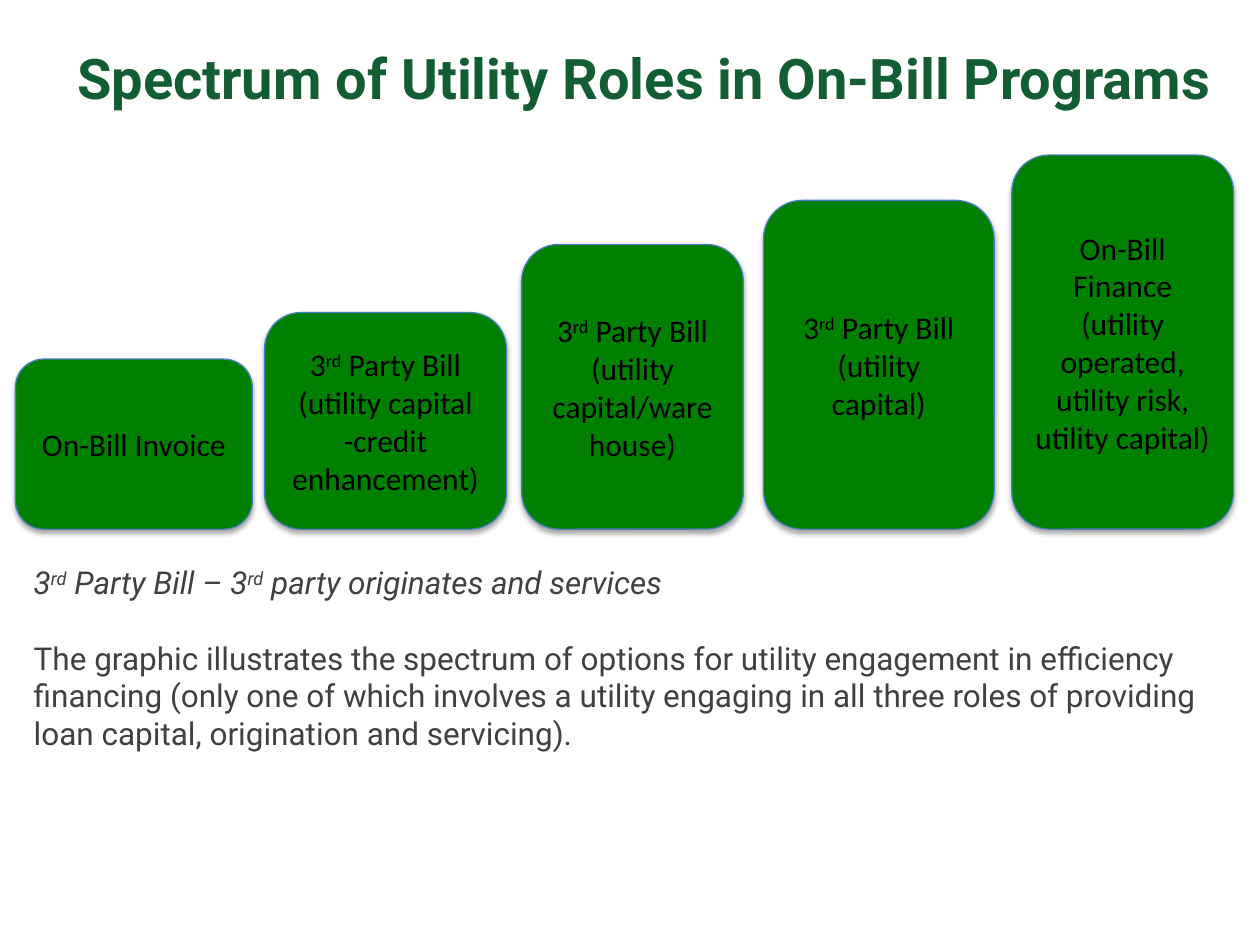
from typing import NamedTuple

from lxml import etree
from pptx import Presentation
from pptx.dml.color import RGBColor
from pptx.enum.shapes import MSO_SHAPE
from pptx.enum.text import MSO_ANCHOR, PP_ALIGN
from pptx.oxml import parse_xml
from pptx.util import Pt

ROUNDED = MSO_SHAPE.ROUNDED_RECTANGLE
MIDDLE = MSO_ANCHOR.MIDDLE
CENTER, LEFT = PP_ALIGN.CENTER, PP_ALIGN.LEFT
BASELINE = 302.4
SHADOW = """
<a:effectLst xmlns:a="http://schemas.openxmlformats.org/drawingml/2006/main">
  <a:outerShdw blurRad="39370" dist="22860" dir="5400000" rotWithShape="0">
    <a:srgbClr val="000000"><a:alpha val="35000"/></a:srgbClr>
  </a:outerShdw>
</a:effectLst>"""


class Role(NamedTuple):
    left: float
    width: float
    height: float
    lines: tuple[str, ...]


THIRD_PARTY = "3^rd^ Party Bill"
ROLES = [
    Role(8.8, 135.4, 97.2, ("On-Bill Invoice",)),
    Role(151.2, 138.2, 123.8, (THIRD_PARTY, "(utility capital -credit enhancement)")),
    Role(298.1, 126.7, 162.7, (THIRD_PARTY, "(utility capital/warehouse)")),
    Role(436.3, 131.8, 187.9, (THIRD_PARTY, "(utility capital)")),
    Role(578.2, 126.7, 213.8,
         ("On-Bill Finance", "(utility operated, utility risk, utility capital)")),
]


def color(value: str) -> RGBColor:
    return RGBColor.from_string(value)


def write(paragraph, text: str, font: str, size: float, hex_color: str,
          align=LEFT, bold: bool = False, italic: bool = False) -> None:
    """Fill a paragraph; text between carets is set as superscript."""
    paragraph.alignment = align
    paragraph.font.name = font
    paragraph.font.size = Pt(size)
    paragraph.font.bold = bold
    paragraph.font.italic = italic
    paragraph.font.color.rgb = color(hex_color)
    for index, part in enumerate(text.split("^")):
        run = paragraph.add_run()
        run.text = part
        if index % 2:
            run.font._element.set("baseline", "30000")


def add_text_frame(slide, left: float, top: float, width: float, height: float):
    frame = slide.shapes.add_textbox(Pt(left), Pt(top), Pt(width), Pt(height)).text_frame
    frame.word_wrap = True
    return frame


def add_role(slide, role: Role) -> None:
    box = slide.shapes.add_shape(ROUNDED, Pt(role.left), Pt(BASELINE - role.height),
                                 Pt(role.width), Pt(role.height))
    box.fill.solid()
    box.fill.fore_color.rgb = color("008000")
    box.line.color.rgb = color("4B7EBC")
    box.line.width = Pt(0.75)
    box._element.spPr.append(parse_xml(etree.tostring(etree.fromstring(SHADOW))))
    frame = box.text_frame
    frame.word_wrap = True
    frame.vertical_anchor = MIDDLE
    for index, line in enumerate(role.lines):
        paragraph = frame.add_paragraph() if index else frame.paragraphs[0]
        write(paragraph, line, "Calibri", 18, "000000", CENTER)


def main() -> None:
    deck = Presentation()
    deck.slide_width, deck.slide_height = Pt(720), Pt(540)
    slide = deck.slides.add_slide(deck.slide_layouts[6])

    title = add_text_frame(slide, 16.6, 8.6, 703.4, 71.3)
    title.vertical_anchor = MIDDLE
    write(title.paragraphs[0], "Spectrum of Utility Roles in On-Bill Programs",
          "Roboto", 32, "135D34", CENTER, bold=True)

    for role in ROLES:
        add_role(slide, role)

    notes = add_text_frame(slide, 12.2, 318.2, 692.6, 138.2)
    write(notes.paragraphs[0], "3^rd^ Party Bill – 3^rd^ party originates and services",
          "Roboto", 18, "404040", italic=True)
    explanation = notes.add_paragraph()
    explanation.space_before = Pt(21.6)
    write(explanation,
          "The graphic illustrates the spectrum of options for utility engagement in "
          "efficiency financing (only one of which involves a utility engaging in all "
          "three roles of providing loan capital, origination and servicing).",
          "Roboto", 18, "404040")

    deck.save("out.pptx")


if __name__ == "__main__":
    main()
